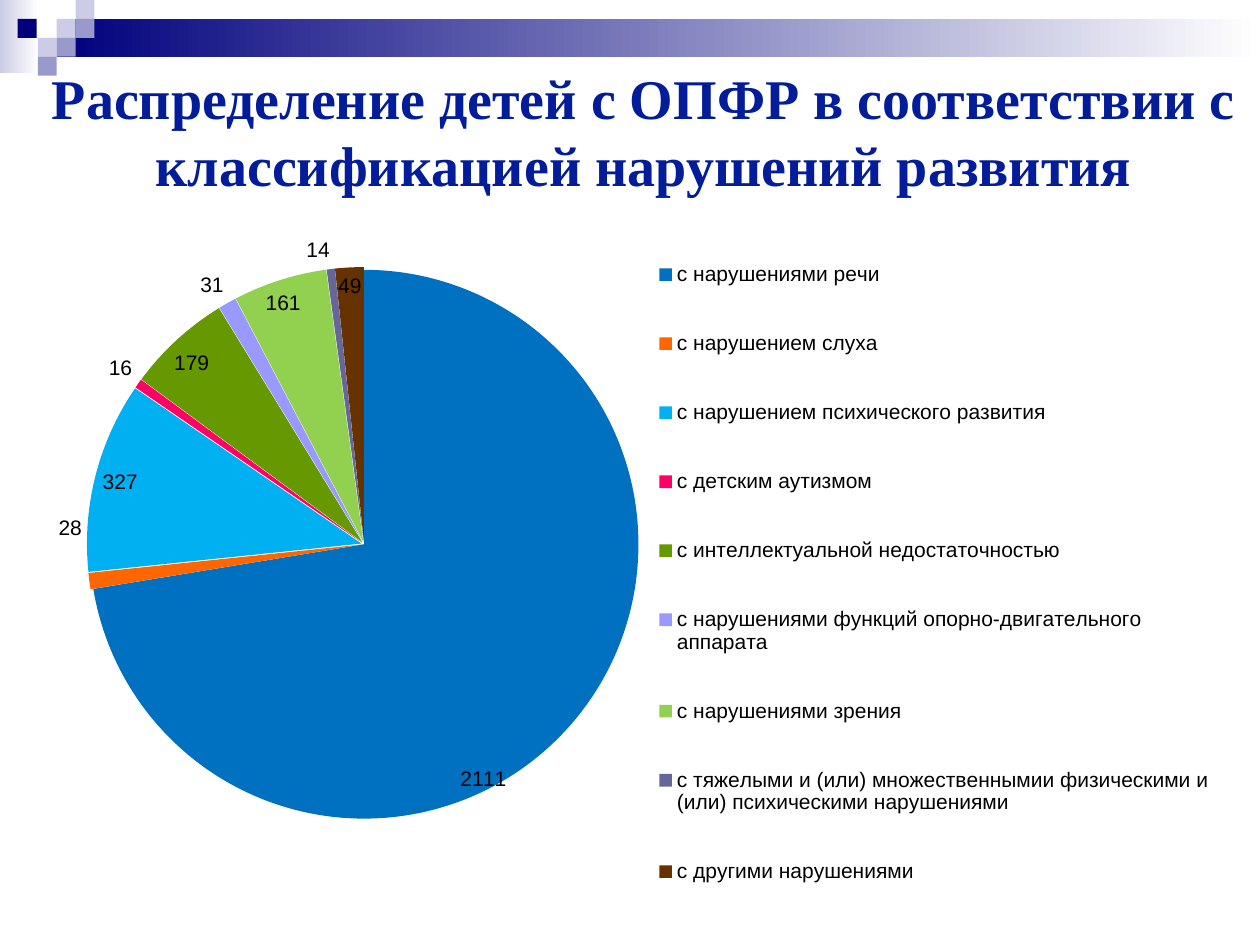
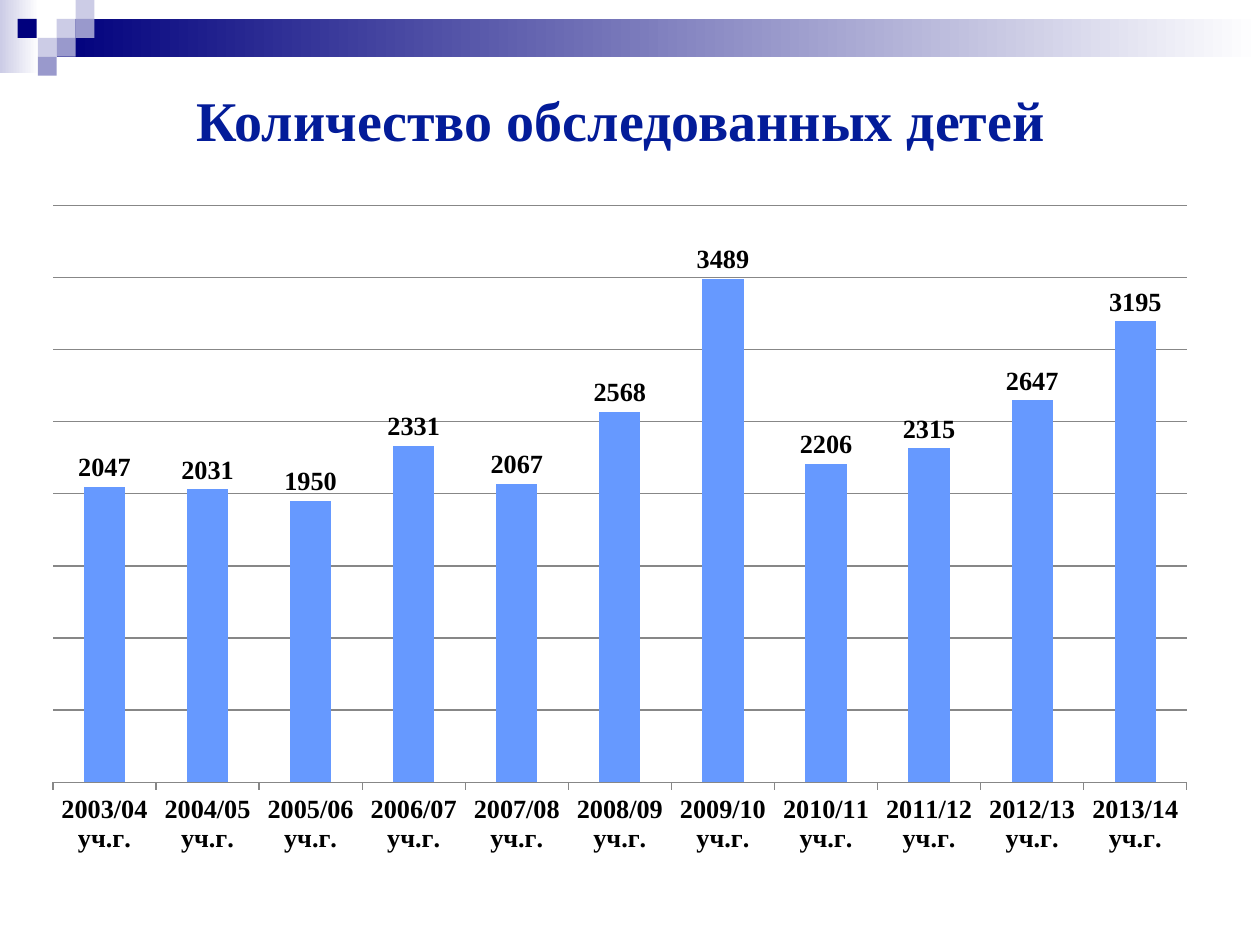
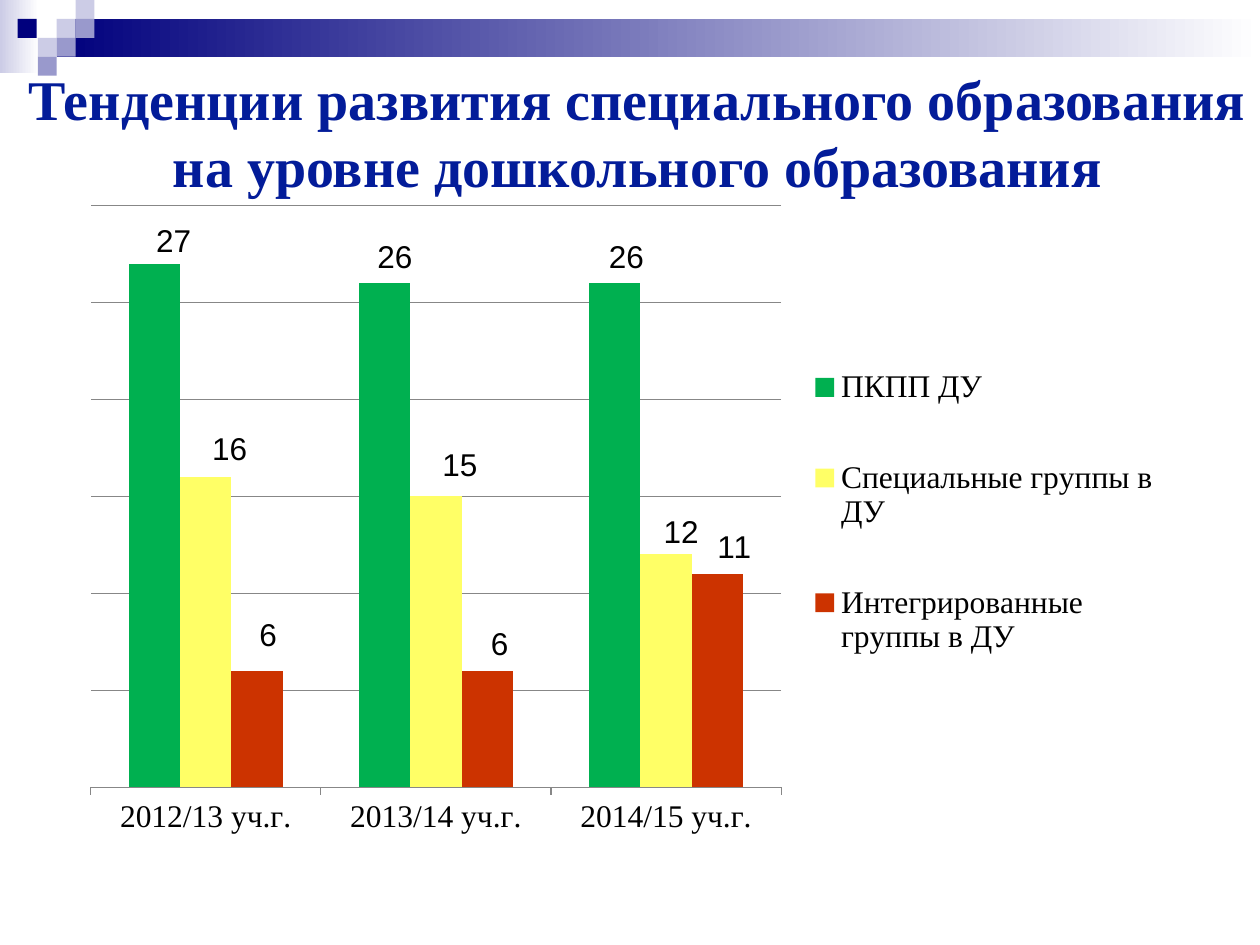
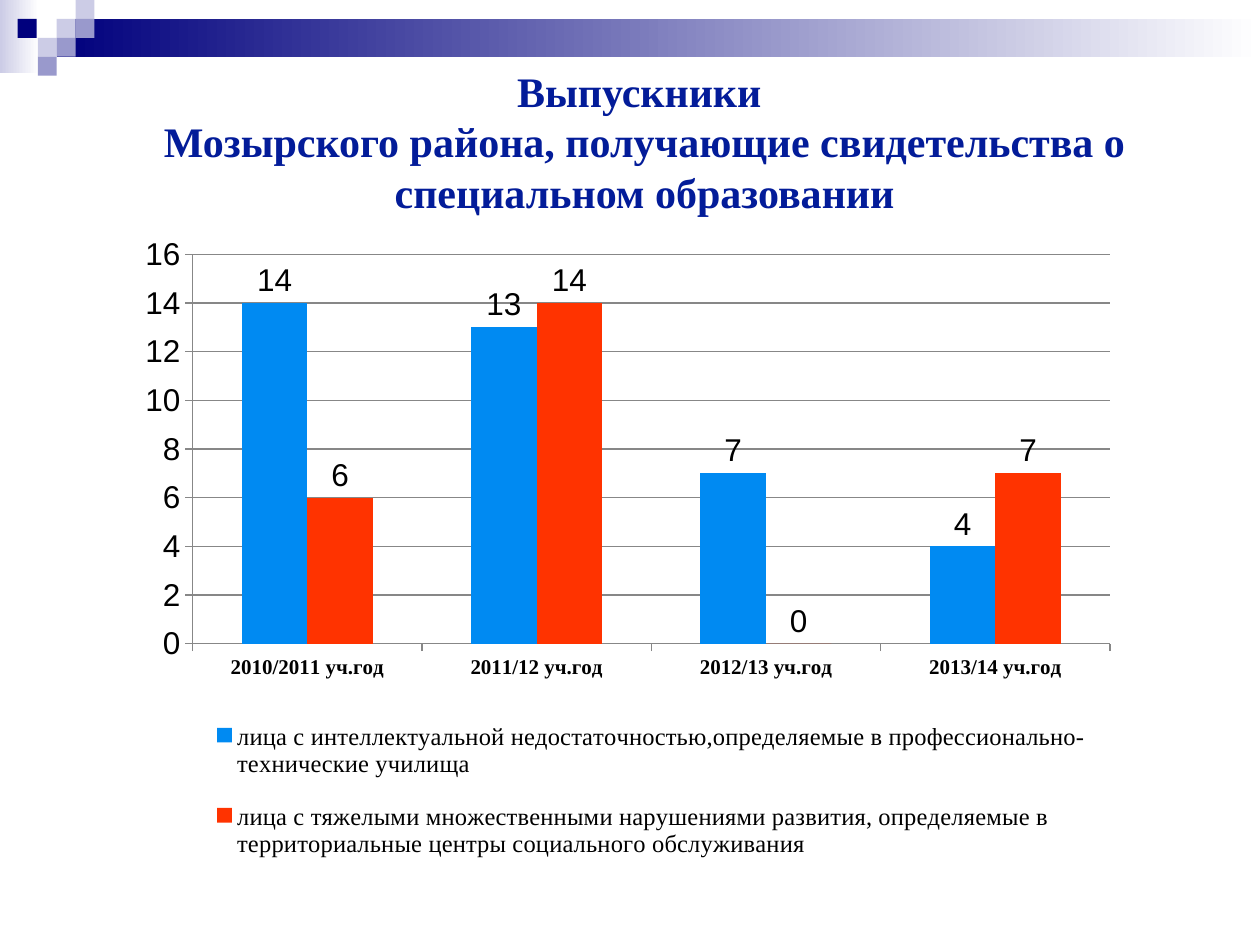
from lxml.etree import SubElement
from pptx import Presentation
from pptx.chart.data import CategoryChartData
from pptx.dml.color import RGBColor
from pptx.enum.chart import XL_CHART_TYPE as ChartType
from pptx.enum.chart import XL_LABEL_POSITION as LabelPosition
from pptx.enum.chart import XL_LEGEND_POSITION as LegendPosition
from pptx.enum.chart import XL_TICK_MARK as TickMark
from pptx.enum.shapes import MSO_SHAPE as Shape
from pptx.enum.text import MSO_ANCHOR as Anchor
from pptx.enum.text import PP_ALIGN as Align
from pptx.oxml.ns import qn
from pptx.util import Inches, Pt

COLORS = {
    "title": "031C99", "text": "000000", "grid": "878787",
    "navy": "00007D", "lilac": "9999CC", "pale": "CCCCE6", "white": "FFFFFF",
}
SERIF, SANS = "Times New Roman", "Arial"

# Header decoration: gradient bars and the small squares on top of them
SQUARE = 0.15
BARS = [((0, 0, 0.31, 0.58), "pale"), ((0.45, 0.15, 9.55, 0.3), "navy")]
SQUARES = [
    (0.45, 0.15, "pale"), (0.6, 0, "pale"), (0.6, 0.15, "lilac"), (0.3, 0.3, "pale"),
    (0.14, 0.15, "navy"), (0.45, 0.3, "lilac"), (0.3, 0.45, "lilac"),
]

# Series are (name, values, colour); plot, legend and label shifts are inches within the chart
SLIDES = [
    {
        "title": ["Распределение детей с ОПФР в соответствии с классификацией нарушений развития"],
        "title_at": (0.25, 0.6, 9.72, 0.87),
        "chart_at": (0.31, 1.72, 9.38, 5.78),
        "type": ChartType.PIE, "size": 12,
        "categories": [
            "с нарушениями речи", "с нарушением слуха", "с нарушением психического развития ",
            "с детским аутизмом", "с интеллектуальной недостаточностью",
            "с нарушениями функций опорно-двигательного аппарата", "с нарушениями зрения",
            "с тяжелыми и (или) множественнымии физическими и (или) психическими нарушениями",
            "с другими нарушениями",
        ],
        "series": [("Series 1", [2111, 28, 327, 16, 179, 31, 161, 14, 49], None)],
        "slices": ["0070C0", "FF6600", "00B0F0", "FF0066", "669900",
                   "9999FF", "92D050", "666699", "663300"],
        "label_shifts": [[(-0.48, 0.58), (0, -0.52), (0, -0.05), (0, 0), (-0.06, 0.05),
                          (0, 0), (-0.13, 0.04), (0, 0), (0, 0)]],
        "plot": (0.23, 0.4, 4.7, 4.4),
        "legend": (LegendPosition.RIGHT, SANS, 12, (4.83, 0, 4.55, 5.66)),
    },
    {
        "title": ["Количество обследованных детей"],
        "title_at": (0.43, 0.44, 9, 1.01),
        "chart_at": (0.23, 1.53, 9.38, 5.35),
        "type": ChartType.COLUMN_CLUSTERED, "size": 18,
        "categories": [f"{year}/{year % 100 + 1:02} уч.г." for year in range(2003, 2014)],
        "series": [("Series 1", [2047, 2031, 1950, 2331, 2067, 2568, 3489, 2206, 2315, 2647, 3195],
                    "6699FF")],
        "label_font": (SERIF, 15, True),
        "category_font": (SERIF, 15, True),
        "scale": (4000, 500), "show_scale": False,
        "plot": (0.19, 0.1, 9, 4.58),
    },
    {
        "title": ["Тенденции развития специального образования на уровне дошкольного образования"],
        "title_at": (0.12, 0.54, 9.88, 1.01),
        "chart_at": (0.55, 1.53, 8.75, 5.19),
        "type": ChartType.COLUMN_CLUSTERED, "size": 18,
        "categories": ["2012/13 уч.г.", "2013/14 уч.г.", "2014/15 уч.г."],
        "series": [
            ("ПКПП ДУ", [27, 26, 26], "00B050"),
            ("Специальные группы в ДУ", [16, 15, 12], "FFFF66"),
            ("Интегрированные группы в ДУ", [6, 6, 11], "CC3300"),
        ],
        "label_shifts": [
            [(0.15, 0), (0.08, -0.02), (0.09, -0.02)],
            [(0.19, -0.04), (0.19, -0.07), (0.12, 0)],
            [(0.09, -0.1), (0.1, -0.03), (0.14, -0.03)],
        ],
        "category_font": (SERIF, 18, False),
        "scale": (30, 5), "show_scale": False,
        "plot": (0.17, 0.1, 5.48, 4.62),
        "legend": (LegendPosition.RIGHT, SERIF, 18, (5.86, 0.96, 2.8, 3.15)),
    },
    {
        "title": ["Выпускники ",
                  "Мозырского района, получающие свидетельства о специальном образовании"],
        "title_at": (0.39, 0.47, 9.45, 1.31),
        "title_size": 24, "title_anchor": Anchor.TOP,
        "chart_at": (0.55, 1.87, 8.83, 5.39),
        "type": ChartType.COLUMN_CLUSTERED, "size": 18,
        "categories": ["2010/2011 уч.год", "2011/12 уч.год", "2012/13 уч.год", "2013/14 уч.год"],
        "series": [
            ("лица с интеллектуальной недостаточностью,определяемые в "
             "профессионально-технические училища", [14, 13, 7, 4], "008AF2"),
            ("лица с тяжелыми множественными нарушениями развития, определяемые в "
             "территориальные центры социального обслуживания", [6, 14, 0, 7], "FF3300"),
        ],
        "category_font": (SERIF, 12, True),
        "scale": (16, 2), "show_scale": True,
        "plot": (0.98, 0.15, 7.28, 3.09),
        "legend": (LegendPosition.BOTTOM, SERIF, 14, (1, 3.67, 7.24, 1.47)),
    },
]


def rgb(value):
    return RGBColor.from_string(COLORS.get(value, value))


def place(area):
    return [Inches(length) for length in area]


def set_font(font, name, size, bold=False, color="text"):
    font.name, font.size, font.bold = name, Pt(size), bold
    font.color.rgb = rgb(color)


def paint(fill, color):
    fill.solid()
    fill.fore_color.rgb = rgb(color)


def draw_line(line):
    line.color.rgb = rgb("grid")
    line.width = Pt(0.75)


# Header and title
def add_rectangle(page, area):
    box = page.shapes.add_shape(Shape.RECTANGLE, *place(area))
    box.shadow.inherit = False
    box.line.fill.background()
    return box


def add_header(page):
    for area, color in BARS:
        fill = add_rectangle(page, area).fill
        fill.gradient()
        fill.gradient_angle = 0
        for stop, shade in zip(fill.gradient_stops, (color, "white")):
            stop.color.rgb = rgb(shade)
    for left, top, color in SQUARES:
        paint(add_rectangle(page, (left, top, SQUARE, SQUARE)).fill, color)


def add_title(page, content):
    frame = page.shapes.add_textbox(*place(content["title_at"])).text_frame
    frame.word_wrap = True
    frame.vertical_anchor = content.get("title_anchor", Anchor.MIDDLE)
    frame.text = "\n".join(content["title"])
    for para in frame.paragraphs:
        para.alignment = Align.CENTER
        for span in para.runs:
            set_font(span.font, SERIF, content.get("title_size", 32), True, "title")


# Chart layout: inches become fractions of the chart's width and height
def add_layout(before, lengths, content, area=False):
    parent = before.getparent()
    for old in parent.findall(qn("c:layout")):
        parent.remove(old)
    layout = SubElement(parent, qn("c:layout"))
    before.addprevious(layout)
    manual = SubElement(layout, qn("c:manualLayout"))
    chart_size = content["chart_at"][2:] * 2
    settings = [(tag, length / full) for tag, length, full in zip("xywh", lengths, chart_size)]
    if area:
        settings = [("xMode", "edge"), ("yMode", "edge")] + settings
        if parent.tag == qn("c:plotArea"):
            settings.insert(0, ("layoutTarget", "inner"))
    for tag, value in settings:
        SubElement(manual, qn(f"c:{tag}")).set("val", str(value))


def place_label(series, index, position, shift, content):
    series.points[index].data_label.position = position
    if any(shift):
        label = series._element.find(qn("c:dLbls")).findall(qn("c:dLbl"))[index]
        add_layout(label.find(qn("c:idx")).getnext(), shift, content)


def hide_leader_lines(series):
    labels = series._element.find(qn("c:dLbls"))
    for old in labels.findall(qn("c:showLeaderLines")):
        labels.remove(old)
    SubElement(labels, qn("c:showLeaderLines")).set("val", "0")


def explode(before, percent):
    explosion = SubElement(before.getparent(), qn("c:explosion"))
    explosion.set("val", str(percent))
    before.addprevious(explosion)


def format_pie(plot, content):
    series = plot.series[0]
    shifts = content["label_shifts"][0]
    for index, (color, shift) in enumerate(zip(content["slices"], shifts)):
        paint(series.points[index].format.fill, color)
        position = LabelPosition.OUTSIDE_END if index % 2 else LabelPosition.INSIDE_END
        place_label(series, index, position, shift, content)
    first_slice = series._element.find(qn("c:dPt"))
    explode(first_slice, 1)
    explode(first_slice.find(qn("c:spPr")), 0)
    hide_leader_lines(series)


def format_columns(chart, plot, content):
    plot.gap_width, plot.overlap = 150, 0
    for series, (_, _, color) in zip(plot.series, content["series"]):
        paint(series.format.fill, color)
        series.invert_if_negative = False
    for series, shifts in zip(plot.series, content.get("label_shifts", [])):
        for index, shift in enumerate(shifts):
            place_label(series, index, LabelPosition.OUTSIDE_END, shift, content)
        hide_leader_lines(series)
    categories, values = chart.category_axis, chart.value_axis
    set_font(categories.tick_labels.font, *content["category_font"])
    values.minimum_scale = 0
    values.maximum_scale, values.major_unit = content["scale"]
    values.visible = content["show_scale"]
    values.has_major_gridlines = True
    draw_line(values.major_gridlines.format.line)
    for axis in (categories, values):
        axis.major_tick_mark = TickMark.OUTSIDE
        axis.minor_tick_mark = TickMark.NONE
        draw_line(axis.format.line)


def add_chart(page, content):
    data = CategoryChartData()
    data.categories = content["categories"]
    for name, numbers, _ in content["series"]:
        data.add_series(name, numbers)
    chart = page.shapes.add_chart(content["type"], *place(content["chart_at"]), data).chart
    set_font(chart.font, SANS, content["size"])
    chart.has_title = False

    plot = chart.plots[0]
    is_pie = content["type"] == ChartType.PIE
    plot.vary_by_categories = is_pie
    for series in plot.series:
        labels = series.data_labels
        labels.show_value = True
        set_font(labels.font, *content.get("label_font", (SANS, content["size"])))
        if not is_pie:
            labels.position = LabelPosition.OUTSIDE_END
    if is_pie:
        format_pie(plot, content)
    else:
        format_columns(chart, plot, content)
    add_layout(plot._element, content["plot"], content, area=True)

    chart.has_legend = "legend" in content
    if chart.has_legend:
        position, font_name, size, area = content["legend"]
        legend = chart.legend
        legend.position = position
        legend.include_in_layout = False
        set_font(legend.font, font_name, size)
        add_layout(legend._element.find(qn("c:overlay")), area, content, area=True)


def main():
    deck = Presentation()
    deck.slide_width, deck.slide_height = Inches(10), Inches(7.5)
    for content in SLIDES:
        page = deck.slides.add_slide(deck.slide_layouts[6])
        add_header(page)
        add_title(page, content)
        add_chart(page, content)
    deck.save("out.pptx")


if __name__ == "__main__":
    main()
